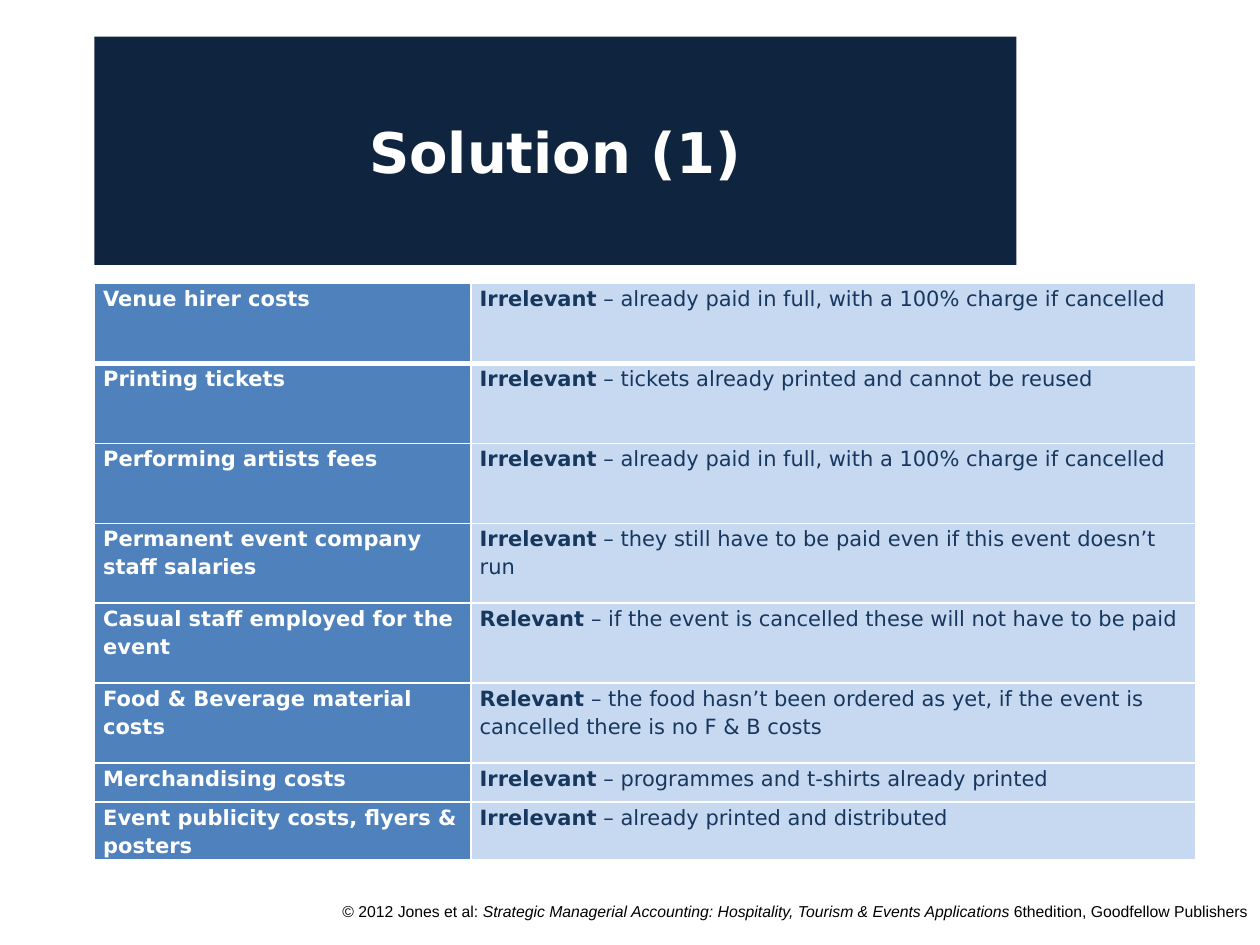
from lxml import etree
from pptx import Presentation
from pptx.dml.color import RGBColor
from pptx.enum import text
from pptx.oxml import ns
from pptx.util import Cm, Pt

NAVY = RGBColor(0x0F, 0x24, 0x3E)
BLUE = RGBColor(0x4F, 0x81, 0xBD)
PALE_BLUE = RGBColor(0xC6, 0xD9, 0xF1)
DARK_BLUE = RGBColor(0x17, 0x37, 0x5E)
WHITE = RGBColor(0xFF, 0xFF, 0xFF)
BLACK = RGBColor(0, 0, 0)
FONT = "DejaVu Sans"

TITLE = "Solution (1)"
COSTS = [  # cost, verdict, reason
    ("Venue hirer costs", "Irrelevant", "already paid in full, with a 100% charge if cancelled"),
    ("Printing tickets", "Irrelevant", "tickets already printed and cannot be reused"),
    ("Performing artists fees", "Irrelevant", "already paid in full, with a 100% charge if cancelled"),
    ("Permanent event company staff salaries", "Irrelevant",
     "they still have to be paid even if this event doesn’t run"),
    ("Casual staff employed for the event", "Relevant",
     "if the event is cancelled these will not have to be paid"),
    ("Food & Beverage material costs", "Relevant",
     "the food hasn’t been ordered as yet, if the event is cancelled there is no F & B costs"),
    ("Merchandising costs", "Irrelevant", "programmes and t-shirts already printed"),
    ("Event publicity costs, flyers & posters", "Irrelevant", "already printed and distributed"),
]
FOOTER = [  # words, italic
    ("© 2012 Jones et al: ", False),
    ("Strategic Managerial Accounting: Hospitality, Tourism & Events Applications ", True),
    ("6thedition, Goodfellow Publishers", False),
]

LEFT = Cm(1.9)
COLUMN_WIDTHS = [Cm(7.59), Cm(14.61)]
ROW_HEIGHTS = [Cm(1.61)] * 6 + [Cm(0.79)] * 2


def add_run(paragraph, words, size, color, bold=False, italic=False, font=FONT):
    run = paragraph.add_run()
    run.text = words
    run.font.name = font
    run.font.size = Pt(size)
    run.font.bold = bold
    run.font.italic = italic
    run.font.color.rgb = color


def set_borders(cell, top, bottom):
    """Draw white borders; widths are in points, the sides are 1 pt."""
    properties = cell._tc.get_or_add_tcPr()
    widths = {"a:lnL": 1, "a:lnR": 1, "a:lnT": top, "a:lnB": bottom}
    for position, (tag, width) in enumerate(widths.items()):
        line = etree.Element(ns.qn(tag), w=str(Pt(width)))
        fill = etree.SubElement(line, ns.qn("a:solidFill"))
        etree.SubElement(fill, ns.qn("a:srgbClr"), val=str(WHITE))
        properties.insert(position, line)


def fill_cell(cell, color, runs):
    """Fill a cell and write its (words, colour, bold) runs."""
    cell.fill.solid()
    cell.fill.fore_color.rgb = color
    cell.margin_left = cell.margin_right = Cm(0.18)
    cell.margin_top = cell.margin_bottom = 0
    paragraph = cell.text_frame.paragraphs[0]
    paragraph.line_spacing = 1.15
    for words, font_color, bold in runs:
        add_run(paragraph, words, 12, font_color, bold)


def add_title(slide):
    title = slide.shapes.title
    title.left, title.top, title.width, title.height = LEFT, Cm(0.74), Cm(18.59), Cm(4.6)
    title.fill.solid()
    title.fill.fore_color.rgb = NAVY
    title.text_frame.vertical_anchor = text.MSO_ANCHOR.MIDDLE
    paragraph = title.text_frame.paragraphs[0]
    paragraph.alignment = text.PP_ALIGN.CENTER
    add_run(paragraph, TITLE, 32, WHITE, bold=True)


def add_cost_table(slide):
    frame = slide.shapes.add_table(len(COSTS), len(COLUMN_WIDTHS), LEFT, Cm(5.72),
                                   sum(COLUMN_WIDTHS), sum(ROW_HEIGHTS))
    table = frame.table
    for column, width in zip(table.columns, COLUMN_WIDTHS):
        column.width = width
    for index, (row, height, (cost, verdict, reason)) in enumerate(
            zip(table.rows, ROW_HEIGHTS, COSTS)):
        row.height = height
        cost_cell, reason_cell = row.cells
        fill_cell(cost_cell, BLUE, [(cost, WHITE, True)])
        fill_cell(reason_cell, PALE_BLUE,
                  [(verdict, DARK_BLUE, True), (f" – {reason}", DARK_BLUE, False)])
        for cell in (cost_cell, reason_cell):
            set_borders(cell, top=3 if index == 1 else 1, bottom=3 if index == 0 else 1)


def add_footer(slide):
    footer = slide.shapes.add_textbox(Cm(5.66), Cm(18.06), Cm(19.74), Cm(0.99))
    footer.text_frame.word_wrap = True
    paragraph = footer.text_frame.paragraphs[0]
    paragraph.alignment = text.PP_ALIGN.RIGHT
    for words, italic in FOOTER:
        add_run(paragraph, words, 9, BLACK, italic=italic, font="Arial")


def main():
    presentation = Presentation()
    presentation.slide_width, presentation.slide_height = Cm(25.4), Cm(19.05)
    slide = presentation.slides.add_slide(presentation.slide_layouts.get_by_name("Title Only"))
    add_footer(slide)
    add_title(slide)
    add_cost_table(slide)
    presentation.save("out.pptx")


if __name__ == "__main__":
    main()
